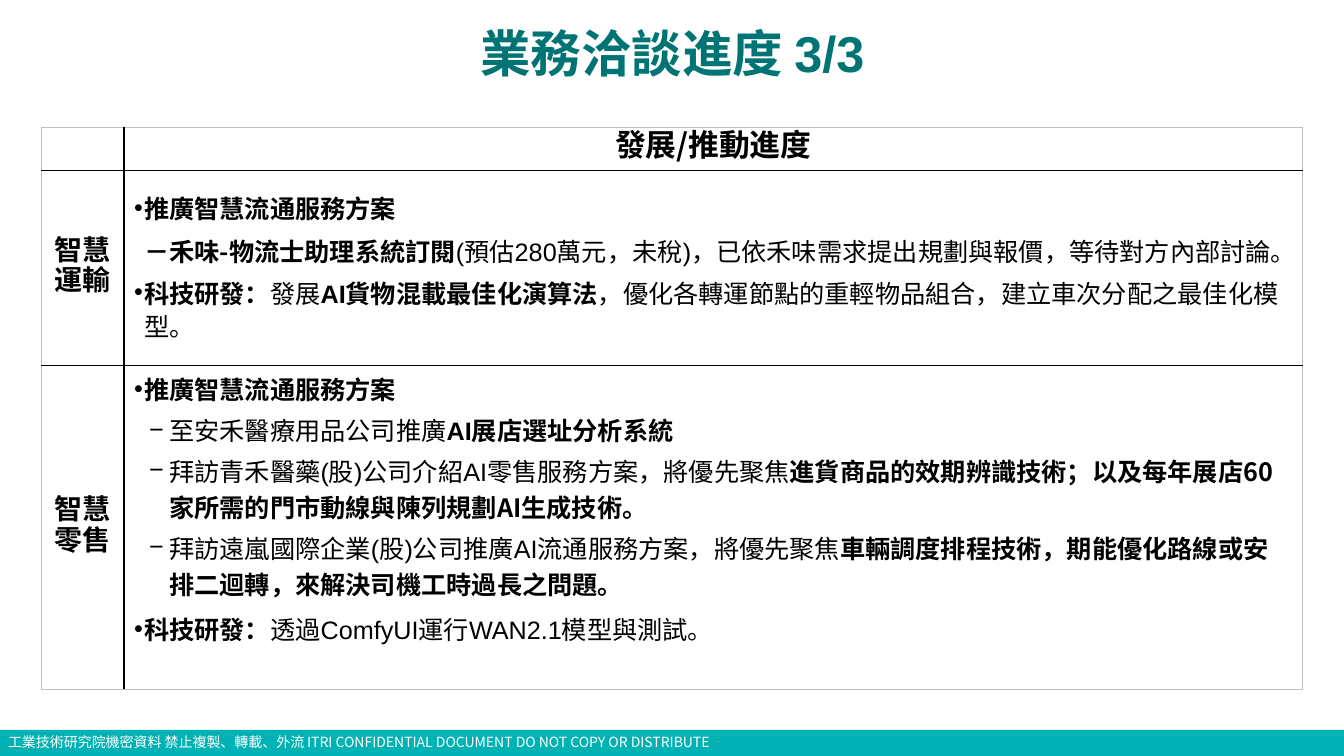
from dataclasses import dataclass

from lxml import etree
from pptx import Presentation
from pptx.dml.color import RGBColor
from pptx.enum.shapes import MSO_SHAPE
from pptx.enum.text import MSO_ANCHOR, MSO_AUTO_SIZE, PP_ALIGN
from pptx.oxml.ns import qn
from pptx.util import Inches, Pt

RECT = MSO_SHAPE.RECTANGLE
TOP, MIDDLE = MSO_ANCHOR.TOP, MSO_ANCHOR.MIDDLE
LEFT, CENTER = PP_ALIGN.LEFT, PP_ALIGN.CENTER
NO_FIT = MSO_AUTO_SIZE.NONE
TITLE_ONLY = 5


@dataclass(frozen=True)
class Theme:
    teal: str = "007474"
    bar: str = "00B2B3"
    white: str = "FFFFFF"
    black: str = "000000"
    edge: str = "C0C0C0"
    latin: str = "Arial"
    cjk: str = "Noto Sans CJK SC"
    title: int = 36
    head: int = 22
    label: int = 20
    body: int = 18
    foot: int = 10


@dataclass(frozen=True)
class Style:
    """Paragraph layout: indents in inches, spacing in points."""
    line: int
    before: int = 0
    left: float = 0
    hang: float = 0
    bullet: str = ""
    align: PP_ALIGN = LEFT


class Deck:
    def __init__(self, theme):
        self.theme = theme
        self.file = Presentation()
        self.file.slide_width = Inches(13.33)
        self.file.slide_height = Inches(7.5)
        self.slide = self.file.slides.add_slide(self.file.slide_layouts[TITLE_ONLY])

    def run(self, para, text, size, color, bold=False, font=None):
        run = para.add_run()
        run.text = text
        run.font.size = Pt(size)
        run.font.bold = bold
        run.font.name = font or self.theme.latin
        run.font.color.rgb = RGBColor.from_string(color)
        east = etree.Element(qn("a:ea"), typeface=self.theme.cjk)
        run.font._element.find(qn("a:latin")).addnext(east)

    def layout(self, para, style, first):
        props = para._p.get_or_add_pPr()
        if style.bullet:
            etree.SubElement(props, qn("a:buFont"), typeface=self.theme.latin)
            etree.SubElement(props, qn("a:buChar"), char=style.bullet)
        if style.left:
            props.set("marL", str(Inches(style.left)))
            props.set("indent", str(Inches(-style.hang)))
        para.alignment = style.align
        para.line_spacing = Pt(style.line)
        para.space_before = Pt(0 if first else style.before)

    def title(self, text, *box):
        shape = self.slide.shapes.title
        shape.left, shape.top, shape.width, shape.height = map(Inches, box)
        frame = shape.text_frame
        frame.auto_size = NO_FIT
        frame.vertical_anchor = TOP
        frame.margin_top = frame.margin_bottom = 0
        para = frame.paragraphs[0]
        para.alignment = CENTER
        self.run(para, text, self.theme.title, self.theme.teal, True)

    def rect(self, color, *box):
        shape = self.slide.shapes.add_shape(RECT, *map(Inches, box))
        shape.shadow.inherit = False
        shape.fill.solid()
        shape.fill.fore_color.rgb = RGBColor.from_string(color)
        shape.line.fill.background()

    def text(self, text, size, color, *box):
        frame = self.slide.shapes.add_textbox(*map(Inches, box)).text_frame
        frame.word_wrap = True
        frame.vertical_anchor = MIDDLE
        frame.margin_left = Inches(0.08)
        frame.margin_top = frame.margin_bottom = 0
        self.run(frame.paragraphs[0], text, size, color, font=self.theme.cjk)

    def table(self, left, top, cols, rows):
        frame = self.slide.shapes.add_table(
            len(rows), len(cols), Inches(left), Inches(top),
            Inches(sum(cols)), Inches(sum(rows)))
        table = frame.table
        table.first_row = table.horz_banding = False
        for col, width in zip(table.columns, cols):
            col.width = Inches(width)
        for row, height in zip(table.rows, rows):
            row.height = Inches(height)
        for r in range(len(rows)):
            for c in range(len(cols)):
                cell = table.cell(r, c)
                cell.fill.solid()
                cell.fill.fore_color.rgb = RGBColor.from_string(self.theme.white)
                self.border(cell, {"L": c == 0, "R": c == len(cols) - 1,
                                   "T": r == 0, "B": r == len(rows) - 1})
        return table

    def border(self, cell, sides):
        props = cell._tc.get_or_add_tcPr()
        for place, (side, outer) in enumerate(sides.items()):
            line = etree.Element(qn("a:ln" + side), w=str(Pt(0.5 if outer else 1)))
            fill = etree.SubElement(line, qn("a:solidFill"))
            color = self.theme.edge if outer else self.theme.black
            etree.SubElement(fill, qn("a:srgbClr"), val=color)
            props.insert(place, line)

    def cell(self, cell, size, paras, anchor=MIDDLE):
        cell.vertical_anchor = anchor
        frame = cell.text_frame
        for i, (style, *runs) in enumerate(paras):
            para = frame.add_paragraph() if i else frame.paragraphs[0]
            self.layout(para, style, i == 0)
            for text, bold, *font in runs:
                self.run(para, text, size, self.theme.black, bold, *font)


def main():
    theme = Theme()
    cjk = theme.cjk
    deck = Deck(theme)

    # Title and footer bar
    deck.title("業務洽談進度 3/3", 2.96, 0.22, 7.42, 0.6)
    deck.rect(theme.bar, 0, 7.24, 13.33, 0.26)
    deck.text("工業技術研究院機密資料 禁止複製、轉載、外流 "
              "ITRI CONFIDENTIAL DOCUMENT DO NOT COPY OR DISTRIBUTE",
              theme.foot, theme.white, 0, 7.23, 10.36, 0.27)

    # Table grid, heading and row labels
    table = deck.table(0.41, 1.26, [0.82, 11.69], [0.43, 1.93, 3.21])
    head = Style(24, align=CENTER)
    label = Style(22, align=CENTER)
    deck.cell(table.cell(0, 1), theme.head, [(head, ("發展/推動進度", True, cjk))])
    for row, name in enumerate(["智慧運輸", "智慧零售"], 1):
        deck.cell(table.cell(row, 0), theme.label, [(label, (name, True, cjk))])

    # Transport progress
    point = Style(24, 6, 0.1, 0.1, "•")
    dash = Style(24, 6, 0.29, 0.19)
    deck.cell(table.cell(1, 1), theme.body, [
        (point, ("推廣智慧流通服務方案", True)),
        (dash, ("－禾味-物流士助理系統訂閱", True, cjk),
         ("(預估280萬元，未稅)，已依禾味需求提出規劃與報價，等待對方內部討論。", False)),
        (point, ("科技研發：", True), ("發展", False),
         ("AI貨物混載最佳化演算法", True),
         ("，優化各轉運節點的重輕物品組合，建立車次分配之最佳化模型。", False)),
    ])

    # Retail progress
    point = Style(26, 6, 0.1, 0.1, "•")
    dash = Style(26, 3, 0.35, 0.2, "−")
    deck.cell(table.cell(2, 1), theme.body, [
        (point, ("推廣智慧流通服務方案", True)),
        (dash, ("至安禾醫療用品公司推廣", False), ("AI展店選址分析系統", True)),
        (dash, ("拜訪青禾醫藥(股)公司介紹AI零售服務方案，將優先聚焦", False),
         ("進貨商品的效期辨識技術；以及每年展店60家所需的門市動線與陳列規劃AI生成技術。",
          True, cjk)),
        (dash, ("拜訪遠嵐國際企業(股)公司推廣AI流通服務方案，將優先聚焦", False),
         ("車輛調度排程技術，期能優化路線或安排二迴轉，來解決司機工時過長之問題。",
          True, cjk)),
        (point, ("科技研發：", True), ("透過ComfyUI運行WAN2.1模型與測試。", False)),
    ], TOP)

    deck.file.save("out.pptx")


if __name__ == "__main__":
    main()
